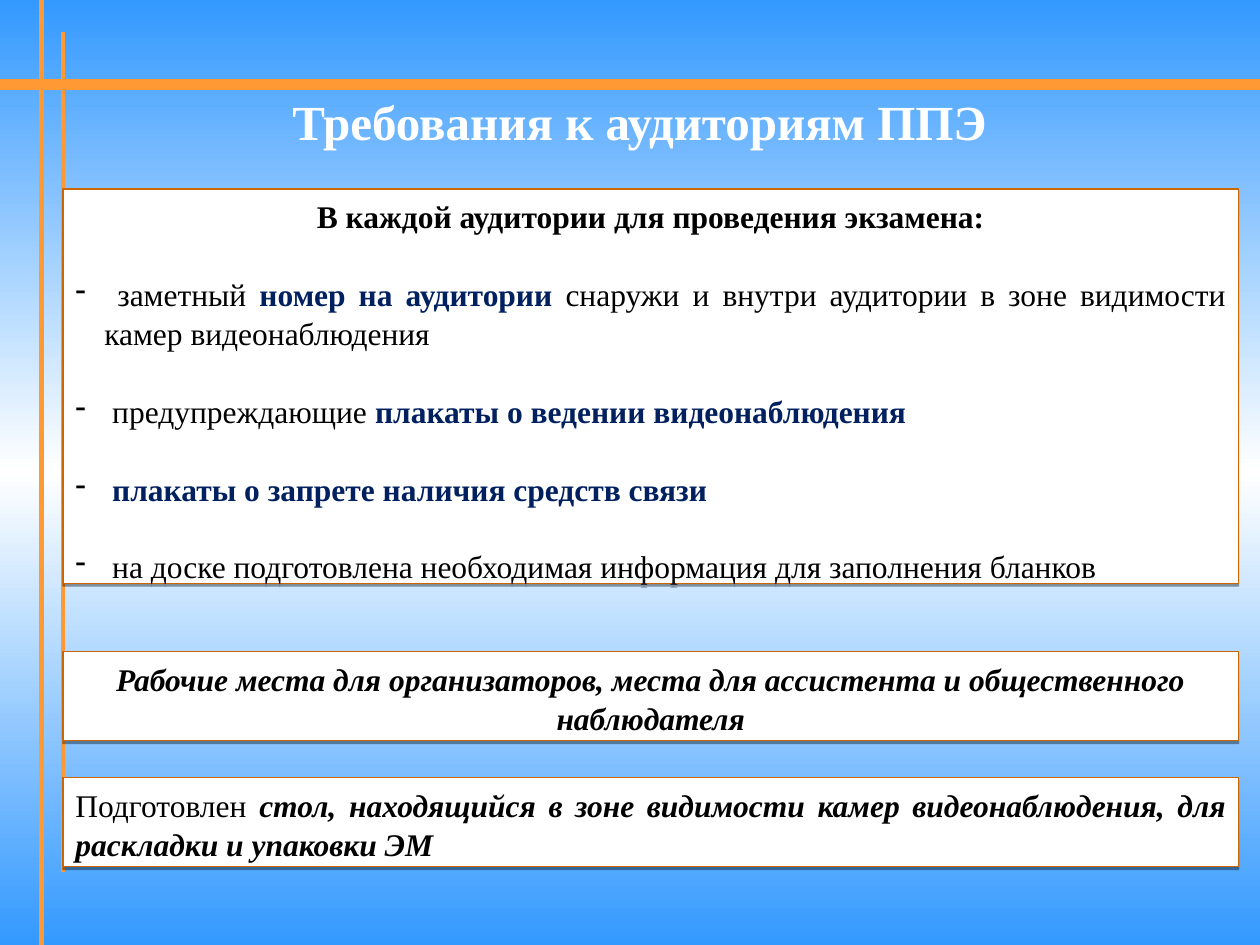
from copy import deepcopy

from pptx import Presentation
from pptx.dml.color import RGBColor
from pptx.enum import shapes, text
from pptx.oxml import parse_xml
from pptx.oxml.ns import nsdecls, qn
from pptx.util import Inches, Pt

# Content: a run is (wording, style), a paragraph is a list of runs
TITLE = "Требования к аудиториям ППЭ"
HEADING = [("В каждой аудитории для проведения экзамена:", "bold")]
REQUIREMENTS = [
    [(" заметный ", "plain"), ("номер на аудитории ", "key"),
     ("снаружи и внутри аудитории в зоне видимости камер видеонаблюдения", "plain")],
    [(" предупреждающие ", "plain"), ("плакаты о ведении видеонаблюдения", "key")],
    [(" ", "plain"), ("плакаты о запрете наличия средств связи", "key")],
    [(" на доске подготовлена необходимая информация для заполнения бланков", "plain")],
]
WORKPLACES = [("Рабочие места для организаторов, места для ассистента и "
               "общественного наблюдателя", "strong")]
TABLE = [("Подготовлен ", "plain"),
         ("стол, находящийся в зоне видимости камер видеонаблюдения, "
          "для раскладки и упаковки ЭМ", "strong")]

THEME = {
    "font": "Times New Roman", "title_size": 28, "body_size": 18, "line_spacing": 1.05,
    "sky": "3399FF", "white": "FFFFFF", "rule": "FF9933", "border": "CC6600",
    # style: colour, bold, italic
    "title": ("FFFFFF", True, False),
    "plain": ("000000", False, False),
    "bold": ("000000", True, False),
    "key": ("002060", True, False),
    "strong": ("000000", True, True),
}

# Layout: start, end, width in points
RULES = [((0, 0.67), (10, 0.67), 6),
         ((0.33, 0), (0.33, 7.5), 3),
         ((0.5, 0.25), (0.5, 6.92), 2.25)]
PANEL_LEFT, PANEL_WIDTH = 0.5, 9.33
BULLET_INDENT = 0.23
ITEM_GAP = 21.7  # one line of body text, in points

CENTER, JUSTIFY = text.PP_ALIGN.CENTER, text.PP_ALIGN.JUSTIFY


def color(name):
    return RGBColor.from_string(THEME.get(name, name))


def paint_background(slide):
    fill = slide.background.fill
    fill.gradient()
    fill.gradient_angle = 270
    first, last = fill.gradient_stops
    stop_list = fill._fill._gradFill.find(qn("a:gsLst"))
    stop_list.insert(1, deepcopy(stop_list[0]))
    for stop, name, position in zip(fill.gradient_stops, ("sky", "white", "sky"), (0, 0.5, 1)):
        stop.color.rgb = color(name)
        stop.position = position


def add_rule(slide, start, end, width):
    rule = slide.shapes.add_connector(
        shapes.MSO_CONNECTOR.STRAIGHT, *map(Inches, start + end))
    rule.line.color.rgb = color("rule")
    rule.line.width = Pt(width)
    rule._element.spPr.append(parse_xml(f"<a:effectLst {nsdecls('a')}/>"))


def write_paragraph(paragraph, runs, align, size):
    paragraph.alignment = align
    for wording, style in runs:
        run = paragraph.add_run()
        run.text = wording
        font = run.font
        font.name, font.size = THEME["font"], Pt(size)
        name, font.bold, font.italic = THEME[style]
        font.color.rgb = color(name)


def add_bullet(paragraph):
    properties = paragraph._p.get_or_add_pPr()
    properties.set("marL", str(Inches(BULLET_INDENT)))
    properties.set("indent", str(-Inches(BULLET_INDENT)))
    properties.append(parse_xml(f'<a:buChar {nsdecls("a")} char="-"/>'))


def add_panel(slide, top, height, paragraphs):
    """Paragraphs are (runs, alignment, bulleted)."""
    panel = slide.shapes.add_shape(
        shapes.MSO_SHAPE.RECTANGLE,
        *map(Inches, (PANEL_LEFT, top, PANEL_WIDTH, height)))
    panel.fill.solid()
    panel.fill.fore_color.rgb = color("white")
    panel.line.color.rgb = color("border")
    panel.line.width = Pt(0.75)
    # Thin shadow below the panel
    panel.shadow.inherit = False
    panel._element.spPr.find(qn("a:effectLst")).append(parse_xml(
        f'<a:outerShdw {nsdecls("a")} blurRad="0" dist="{Pt(1.6)}" dir="5400000" '
        'rotWithShape="0"><a:srgbClr val="000000"><a:alpha val="38000"/></a:srgbClr>'
        '</a:outerShdw>'))
    frame = panel.text_frame
    frame.word_wrap = True
    frame.vertical_anchor = text.MSO_ANCHOR.TOP
    for index, (runs, align, bulleted) in enumerate(paragraphs):
        paragraph = frame.add_paragraph() if index else frame.paragraphs[0]
        paragraph.line_spacing = THEME["line_spacing"]
        if bulleted:
            paragraph.space_before = Pt(ITEM_GAP)
            add_bullet(paragraph)
        write_paragraph(paragraph, runs, align, THEME["body_size"])


def main():
    presentation = Presentation()
    presentation.slide_width, presentation.slide_height = Inches(10), Inches(7.5)
    slide = presentation.slides.add_slide(presentation.slide_layouts[6])
    paint_background(slide)
    for rule in RULES:
        add_rule(slide, *rule)

    # Title
    title = slide.shapes.add_textbox(*map(Inches, (0.42, 0.75, 9.31, 0.42)))
    title.text_frame.word_wrap = True
    title.text_frame.vertical_anchor = text.MSO_ANCHOR.MIDDLE
    write_paragraph(title.text_frame.paragraphs[0], [(TITLE, "title")],
                    CENTER, THEME["title_size"])

    # Panels
    add_panel(slide, 5.17, 0.71, [(WORKPLACES, CENTER, False)])
    add_panel(slide, 6.17, 0.71, [(TABLE, JUSTIFY, False)])
    add_panel(slide, 1.5, 3.13, [(HEADING, CENTER, False)]
              + [(runs, JUSTIFY, True) for runs in REQUIREMENTS])
    presentation.save("out.pptx")


if __name__ == "__main__":
    main()
